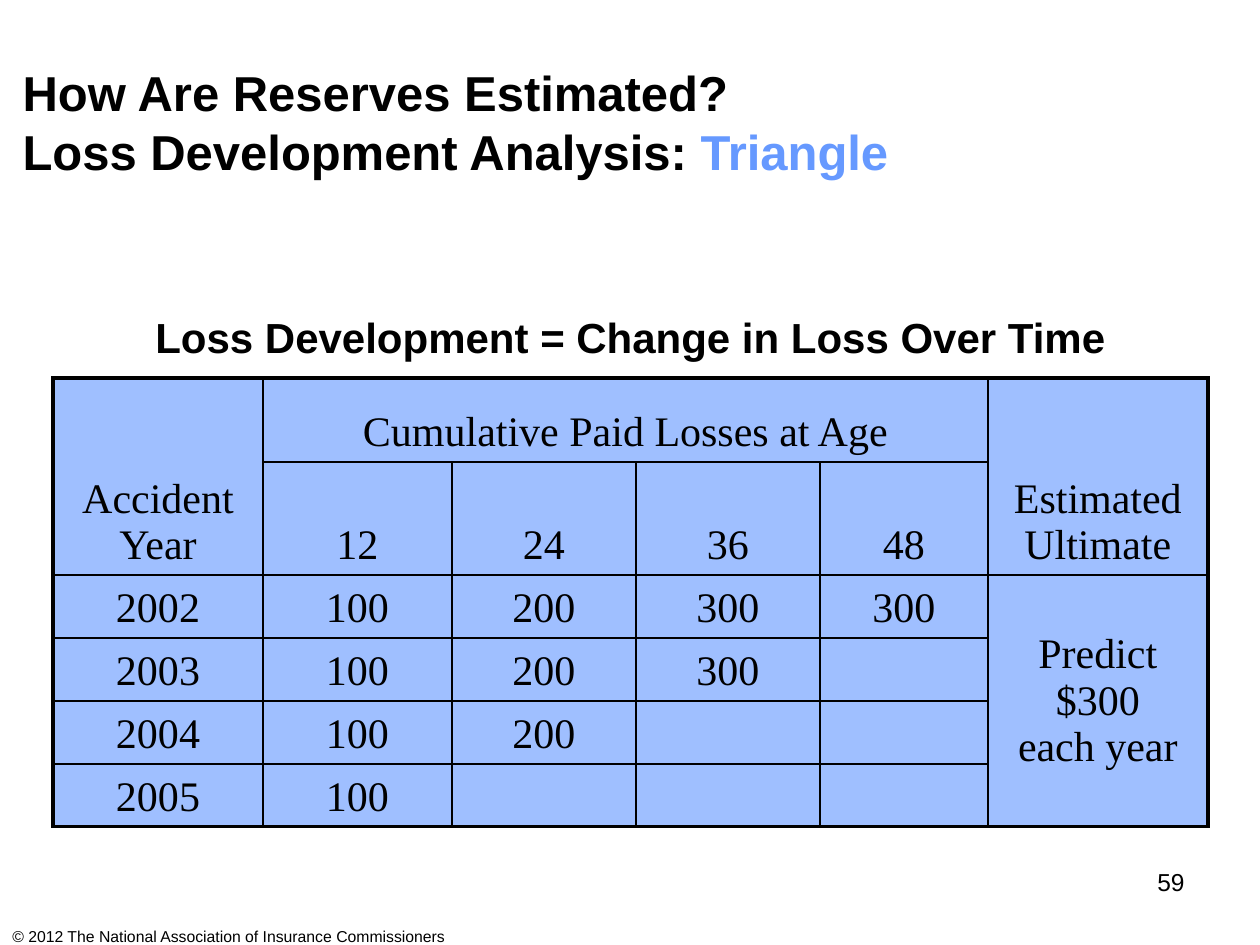
from dataclasses import dataclass

import lxml.etree
import pptx
import pptx.dml.color
import pptx.enum.text
import pptx.oxml.ns
import pptx.util

PX = 914400 // 126
ALIGN = pptx.enum.text.PP_ALIGN
ANCHOR = pptx.enum.text.MSO_ANCHOR
qn = pptx.oxml.ns.qn


@dataclass
class Theme:
    ink: str = "000000"
    accent: str = "6699FF"
    cell: str = "9FBFFF"
    sans: str = "Arial"
    serif: str = "Times New Roman"
    title: int = 28
    body: int = 24
    number: int = 14
    copyright: int = 9
    grid: float = 1
    frame: float = 2.25


theme = Theme()


def write(paragraph, text, *, size, font=theme.sans, color=theme.ink,
          bold=False, align=ALIGN.LEFT):
    """Append a formatted run to the paragraph and align the paragraph."""
    paragraph.alignment = align
    run = paragraph.add_run()
    run.text = text
    run.font.name = font
    run.font.size = pptx.util.Pt(size)
    run.font.bold = bold
    run.font.color.rgb = pptx.dml.color.RGBColor.from_string(color)


def place(*lengths):
    return [length * PX for length in lengths]


deck = pptx.Presentation()
deck.slide_width, deck.slide_height = place(1260, 945)
slide = deck.slides.add_slide(deck.slide_layouts[5])

# Title
title = slide.shapes.title
title.left, title.top, title.width, title.height = place(10, 42, 903, 158)
title.text_frame.auto_size = pptx.enum.text.MSO_AUTO_SIZE.NONE
title.text_frame.vertical_anchor = ANCHOR.MIDDLE
heading = title.text_frame.paragraphs[0]
write(heading, "How Are Reserves Estimated?", size=theme.title, bold=True)
heading.add_line_break()
line_break = heading._p.find(qn("a:br"))
lxml.etree.SubElement(line_break, qn("a:rPr"), sz=str(theme.title * 100))
write(heading, "Loss Development Analysis: ", size=theme.title, bold=True)
write(heading, "Triangle", size=theme.title, bold=True, color=theme.accent)

# Loss triangle
column_widths = [210, 189, 184, 184, 168, 220]
row_heights = [84, 113, 63, 63, 63, 63]
rows = [
    ["Accident Year", "Cumulative Paid Losses at Age", "", "", "", "Estimated Ultimate"],
    ["", "12", "24", "36", "48", ""],
    ["2002", "100", "200", "300", "300", "Predict $300 each year"],
    ["2003", "100", "200", "300", "", ""],
    ["2004", "100", "200", "", "", ""],
    ["2005", "100", "", "", "", ""],
]
merges = [((0, 0), (1, 0)), ((0, 1), (0, 4)), ((0, 5), (1, 5)), ((2, 5), (5, 5))]
last_row, last_column = len(rows) - 1, len(column_widths) - 1

triangle = slide.shapes.add_table(
    len(rows), len(column_widths),
    *place(53, 378, sum(column_widths), sum(row_heights))).table
triangle.first_row = triangle.horz_banding = False
for column, width in zip(triangle.columns, column_widths):
    column.width = width * PX
for row, height in zip(triangle.rows, row_heights):
    row.height = height * PX
for first, last in merges:
    triangle.cell(*first).merge(triangle.cell(*last))

for r, texts in enumerate(rows):
    for c, text in enumerate(texts):
        cell = triangle.cell(r, c)
        cell.margin_left = cell.margin_right = pptx.util.Inches(0.2)
        cell.vertical_anchor = ANCHOR.MIDDLE if text.startswith("Predict") else ANCHOR.BOTTOM
        on_frame = {
            "L": c == 0,
            "R": c + cell.span_width - 1 == last_column,
            "T": r == 0,
            "B": r + cell.span_height - 1 == last_row,
        }
        properties = cell._tc.get_or_add_tcPr()
        for side, outer in on_frame.items():
            width = pptx.util.Pt(theme.frame if outer else theme.grid)
            border = lxml.etree.SubElement(properties, qn(f"a:ln{side}"), w=str(width))
            paint = lxml.etree.SubElement(border, qn("a:solidFill"))
            lxml.etree.SubElement(paint, qn("a:srgbClr"), val=theme.ink)
        cell.fill.solid()
        cell.fill.fore_color.rgb = pptx.dml.color.RGBColor.from_string(theme.cell)
        if text:
            write(cell.text_frame.paragraphs[0], text, size=theme.body,
                  font=theme.serif, align=ALIGN.CENTER)

# Caption, page number and copyright line
labels = [
    ((53, 305, 1155, 63), "Loss Development = Change in Loss Over Time",
     dict(size=theme.body, bold=True, align=ALIGN.CENTER)),
    ((903, 861, 294, 65), "59", dict(size=theme.number, align=ALIGN.RIGHT)),
    ((0, 921, 703, 31), "© 2012 The National Association of Insurance Commissioners",
     dict(size=theme.copyright)),
]
for box, text, style in labels:
    label = slide.shapes.add_textbox(*place(*box)).text_frame
    label.word_wrap = True
    write(label.paragraphs[0], text, **style)

deck.save("out.pptx")
